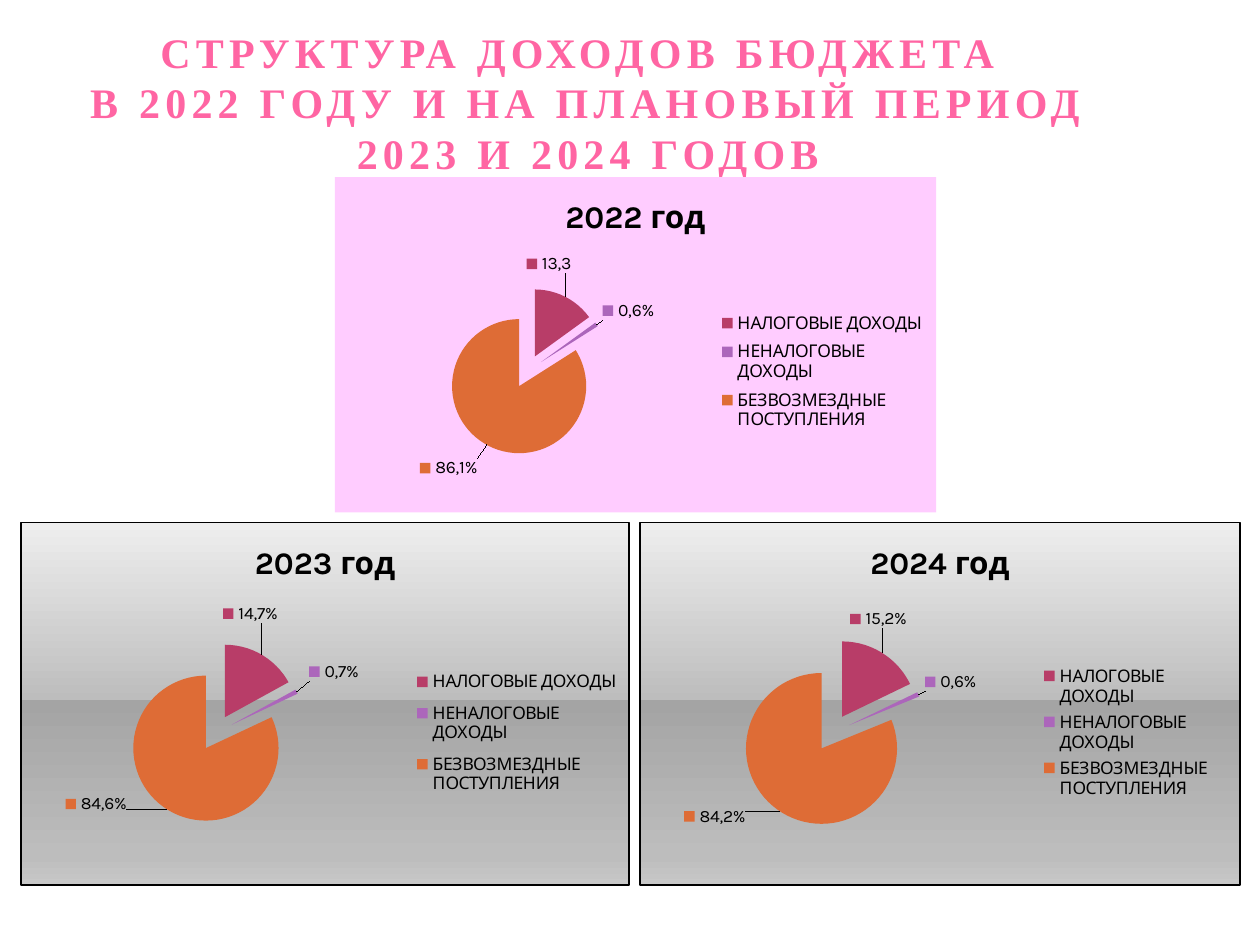
from lxml import etree
from pptx import Presentation
from pptx.chart.data import CategoryChartData
from pptx.dml.color import RGBColor
from pptx.enum.chart import XL_CHART_TYPE, XL_LABEL_POSITION, XL_LEGEND_POSITION
from pptx.enum.text import MSO_ANCHOR, MSO_AUTO_SIZE, PP_ALIGN
from pptx.oxml import parse_xml
from pptx.oxml.ns import nsdecls, qn
from pptx.util import Cm, Pt

PIE = XL_CHART_TYPE.PIE
OUTSIDE_END = XL_LABEL_POSITION.OUTSIDE_END
LEGEND_RIGHT = XL_LEGEND_POSITION.RIGHT
BOTTOM = MSO_ANCHOR.BOTTOM
NO_AUTOFIT = MSO_AUTO_SIZE.NONE
CENTER = PP_ALIGN.CENTER

PINK = RGBColor(0xFF, 0x65, 0xA3)
BLACK = RGBColor(0x00, 0x00, 0x00)
PALE_PINK = RGBColor(0xFF, 0xCC, 0xFF)
SLICE_COLORS = [
    RGBColor(0xB8, 0x3D, 0x68),
    RGBColor(0xAC, 0x66, 0xBB),
    RGBColor(0xDE, 0x6C, 0x36),
]
GREY_STOPS = [
    (0, RGBColor(0xEE, 0xEE, 0xEE)),
    (49, RGBColor(0xBD, 0xBD, 0xBD)),
    (49, RGBColor(0xA4, 0xA4, 0xA4)),
    (92, RGBColor(0xBD, 0xBD, 0xBD)),
    (100, RGBColor(0xC8, 0xC8, 0xC8)),
]

PLAIN_FILL = (
    f'<a:solidFill><a:srgbClr val="{PALE_PINK}"/></a:solidFill>'
    "<a:ln><a:noFill/></a:ln>"
)
stops = "".join(
    f'<a:gs pos="{percent * 1000}"><a:srgbClr val="{color}"/></a:gs>'
    for percent, color in GREY_STOPS
)
GREY_FILL = (
    f'<a:gradFill><a:gsLst>{stops}</a:gsLst><a:lin ang="5400000" scaled="0"/></a:gradFill>'
    f'<a:ln w="{Pt(0.9)}"><a:solidFill><a:srgbClr val="{BLACK}"/></a:solidFill></a:ln>'
)

CATEGORIES = ["НАЛОГОВЫЕ ДОХОДЫ", "НЕНАЛОГОВЫЕ ДОХОДЫ", "БЕЗВОЗМЕЗДНЫЕ ПОСТУПЛЕНИЯ"]

# Plot and legend boxes and label offsets are fractions of the chart.
YEARS = [
    {
        "title": "2022 год", "place": (6.75, 3.57, 12.12, 6.76), "fill": PLAIN_FILL,
        "values": (15, 1, 84), "labels": ("13,3", "0,6%", "86,1%"),
        "offsets": ((-0.07, -0.05), (0, 0), (-0.01, 0.02)),
        "plot": (0.07, 0.33, 0.5, 0.5), "legend": (0.63, 0.38, 0.36, 0.4),
    },
    {
        "title": "2023 год", "place": (0.41, 10.52, 12.29, 7.34), "fill": GREY_FILL,
        "values": (17, 1, 82), "labels": ("14,7%", "0,7%", "84,6%"),
        "offsets": ((-0.07, -0.07), (0.01, -0.02), (-0.06, -0.06)),
        "plot": (0.07, 0.33, 0.5, 0.5), "legend": (0.64, 0.38, 0.35, 0.4),
    },
    {
        "title": "2024 год", "place": (12.89, 10.52, 12.12, 7.34), "fill": GREY_FILL,
        "values": (18, 1, 82), "labels": ("15,2%", "0,6%", "84,2%"),
        "offsets": ((-0.06, -0.05), (0, 0), (-0.05, -0.03)),
        "plot": (0.07, 0.32, 0.5, 0.52), "legend": (0.66, 0.38, 0.3, 0.4),
    },
]


def manual_layout(x, y, width=None, height=None, inner=False):
    """Return a c:layout: a box with width and height, else a label offset."""
    parts = '<c:layoutTarget val="inner"/>' if inner else ""
    if width is not None:
        parts += '<c:xMode val="edge"/><c:yMode val="edge"/>'
    parts += f'<c:x val="{x}"/><c:y val="{y}"/>'
    if width is not None:
        parts += f'<c:w val="{width}"/><c:h val="{height}"/>'
    return parse_xml(
        f'<c:layout {nsdecls("c")}><c:manualLayout>{parts}</c:manualLayout></c:layout>'
    )


def style_font(font, size, bold=False):
    font.name = "Karla"
    font.size = Pt(size)
    font.bold = bold
    font.color.rgb = BLACK


deck = Presentation()
deck.slide_width, deck.slide_height = Cm(25.4), Cm(19.05)
page = deck.slides.add_slide(deck.slide_layouts[5])

heading = page.shapes.title
heading.left, heading.top = Cm(1.27), Cm(0.89)
heading.width, heading.height = Cm(21.16), Cm(2.69)
frame = heading.text_frame
frame.word_wrap = True
frame.auto_size = NO_AUTOFIT
frame.vertical_anchor = BOTTOM
frame.margin_left = frame.margin_right = Cm(0.13)
frame.margin_top = frame.margin_bottom = 0
para = frame.paragraphs[0]
para.alignment = CENTER
para.line_spacing = 1.0
for line_number, line in enumerate(
    ["СТРУКТУРА ДОХОДОВ БЮДЖЕТА ", "В 2022 ГОДУ И НА ПЛАНОВЫЙ ПЕРИОД 2023 И 2024 ГОДОВ"]
):
    if line_number:
        para.add_line_break()
    span = para.add_run()
    span.text = line
    span.font.name = "Times New Roman"
    span.font.size = Pt(24)
    span.font.bold = True
    span.font.color.rgb = PINK
    span.font._element.set("spc", "300")

for year in YEARS:
    data = CategoryChartData()
    data.categories = CATEGORIES
    data.add_series("", year["values"])
    place = [Cm(length) for length in year["place"]]
    chart = page.shapes.add_chart(PIE, *place, data).chart
    style_font(chart.font, 10)

    background = parse_xml(f'<c:spPr {nsdecls("c", "a")}>{year["fill"]}</c:spPr>')
    chart._chartSpace.find(qn("c:chart")).addnext(background)

    chart.has_title = True
    chart.chart_title.include_in_layout = True
    span = chart.chart_title.text_frame.paragraphs[0].add_run()
    span.text = year["title"]
    style_font(span.font, 18, bold=True)

    chart.has_legend = True
    chart.legend.position = LEGEND_RIGHT
    chart.legend.include_in_layout = True
    style_font(chart.legend.font, 10)
    legend_position = chart.legend._element.find(qn("c:legendPos"))
    for old_layout in chart.legend._element.findall(qn("c:layout")):
        chart.legend._element.remove(old_layout)
    legend_position.addnext(manual_layout(*year["legend"]))

    plot_area = chart._chartSpace.find(".//" + qn("c:plotArea"))
    for old_layout in plot_area.findall(qn("c:layout")):
        plot_area.remove(old_layout)
    plot_area.insert(0, manual_layout(*year["plot"], inner=True))

    plot = chart.plots[0]
    plot.vary_by_categories = True
    series = plot.series[0]
    for index, color in enumerate(SLICE_COLORS):
        point = series.points[index]
        point.format.fill.solid()
        point.format.fill.fore_color.rgb = color

        label = point.data_label
        span = label.text_frame.paragraphs[0].add_run()
        span.text = year["labels"][index]
        style_font(span.font, 10)
        label.position = OUTSIDE_END

    for label_xml, offset in zip(series._element.iter(qn("c:dLbl")), year["offsets"]):
        label_xml.find(qn("c:idx")).addnext(manual_layout(*offset))
        label_xml.find(qn("c:showLegendKey")).set("val", "1")

    explosion = etree.Element(qn("c:explosion"), val="25")
    series._element.find(qn("c:dPt")).addprevious(explosion)

deck.save("out.pptx")
